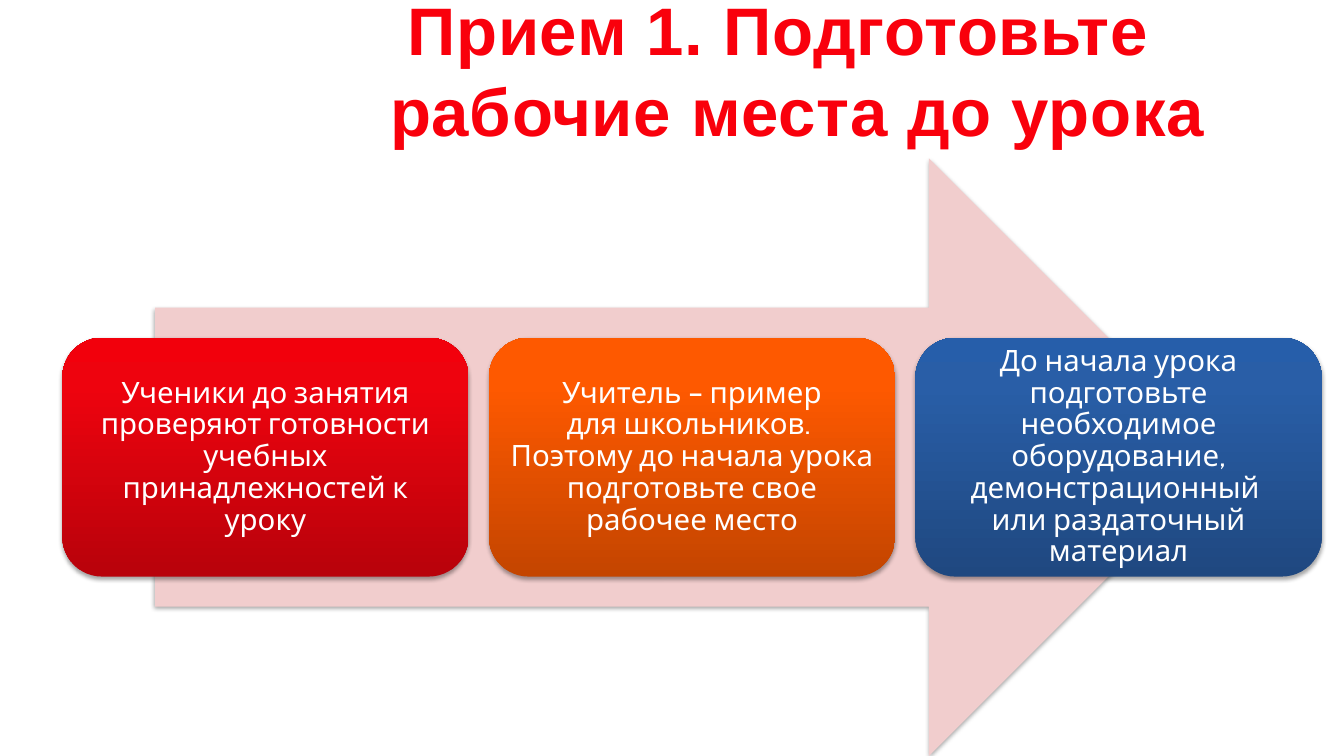
from dataclasses import dataclass

from pptx import Presentation
from pptx.dml.color import RGBColor
from pptx.enum import shapes, text
from pptx.oxml import parse_xml
from pptx.oxml.ns import nsdecls, qn
from pptx.util import Cm, Pt


@dataclass(frozen=True)
class Theme:
    heading: str = "F9000C"
    arrow: str = "F1CDCD"
    card_text: str = "FFFFFF"
    red: tuple = ("B8020B", "EE030E", "F2000C")
    orange: tuple = ("C44500", "FE5900", "FF5A00")
    blue: tuple = ("1F4880", "295EA7", "265EAA")
    heading_font: str = "Arial"
    card_font: str = "Cabin"
    heading_size: int = 48
    card_size: int = 21


theme = Theme()


def add_soft_shadow(shape):
    shape._element.spPr.append(parse_xml(
        f'<a:effectLst {nsdecls("a")}>'
        '<a:outerShdw blurRad="40000" dist="23000" dir="5400000" rotWithShape="0">'
        '<a:srgbClr val="000000"><a:alpha val="35000"/></a:srgbClr>'
        '</a:outerShdw></a:effectLst>'))


def fill_upward(shape, colours):
    stops = "".join(
        f'<a:gs pos="{position}"><a:srgbClr val="{colour}"/></a:gs>'
        for position, colour in zip((0, 80000, 100000), colours))
    shape.fill.gradient()
    gradient = shape._element.spPr.find(qn("a:gradFill"))
    gradient.getparent().replace(gradient, parse_xml(
        f'<a:gradFill {nsdecls("a")} rotWithShape="1"><a:gsLst>{stops}</a:gsLst>'
        '<a:lin ang="16200000" scaled="0"/></a:gradFill>'))


prs = Presentation()
prs.slide_width, prs.slide_height = Cm(33.87), Cm(19.05)
slide = prs.slides.add_slide(prs.slide_layouts[5])

# Heading
heading = slide.shapes.title
heading.left, heading.top = Cm(5.87), Cm(-0.08)
heading.width, heading.height = Cm(27.99), Cm(3.63)
heading.text_frame.auto_size = text.MSO_AUTO_SIZE.NONE
heading.text_frame.vertical_anchor = text.MSO_ANCHOR.MIDDLE
heading_line = heading.text_frame.paragraphs[0]
heading_line.text = "Прием 1. Подготовьте \n рабочие места до урока"
heading_line.alignment = text.PP_ALIGN.CENTER
for run in heading_line.runs:
    run.font.name = theme.heading_font
    run.font.size = Pt(theme.heading_size)
    run.font.bold = True
    run.font.color.rgb = RGBColor.from_string(theme.heading)
    run._r.get_or_add_rPr().set("spc", "50")

# Arrow behind the cards
arrow = slide.shapes.add_shape(
    shapes.MSO_SHAPE.RIGHT_ARROW, Cm(3.91), Cm(3.99), Cm(27.03), Cm(15.06))
arrow.fill.solid()
arrow.fill.fore_color.rgb = RGBColor.from_string(theme.arrow)
arrow.line.fill.background()
add_soft_shadow(arrow)

# Three cards at equal steps
steps = [
    ("Ученики до занятия проверяют готовности учебных принадлежностей к уроку",
     theme.red),
    ("Учитель – пример\nдля школьников. \n"
     "Поэтому до начала урока подготовьте свое рабочее место", theme.orange),
    ("До начала урока подготовьте необходимое оборудование, демонстрационный \n"
     "или раздаточный материал", theme.blue),
]
for index, (advice, colours) in enumerate(steps):
    card = slide.shapes.add_shape(
        shapes.MSO_SHAPE.ROUNDED_RECTANGLE,
        Cm(1.57 + index * 10.75), Cm(8.51), Cm(10.24), Cm(6.02))
    fill_upward(card, colours)
    card.line.fill.background()
    add_soft_shadow(card)

    frame = card.text_frame
    frame.word_wrap = True
    frame.vertical_anchor = text.MSO_ANCHOR.MIDDLE
    # The rounded corners add 0.29 cm to each inset
    frame.margin_left = frame.margin_right = Cm(0.23)
    frame.margin_top = frame.margin_bottom = Cm(0.23)
    paragraph = frame.paragraphs[0]
    paragraph.text = advice
    paragraph.alignment = text.PP_ALIGN.CENTER
    paragraph.line_spacing = 0.9
    for run in paragraph.runs:
        run.font.name = theme.card_font
        run.font.size = Pt(theme.card_size)
        run.font.color.rgb = RGBColor.from_string(theme.card_text)

prs.save("out.pptx")
